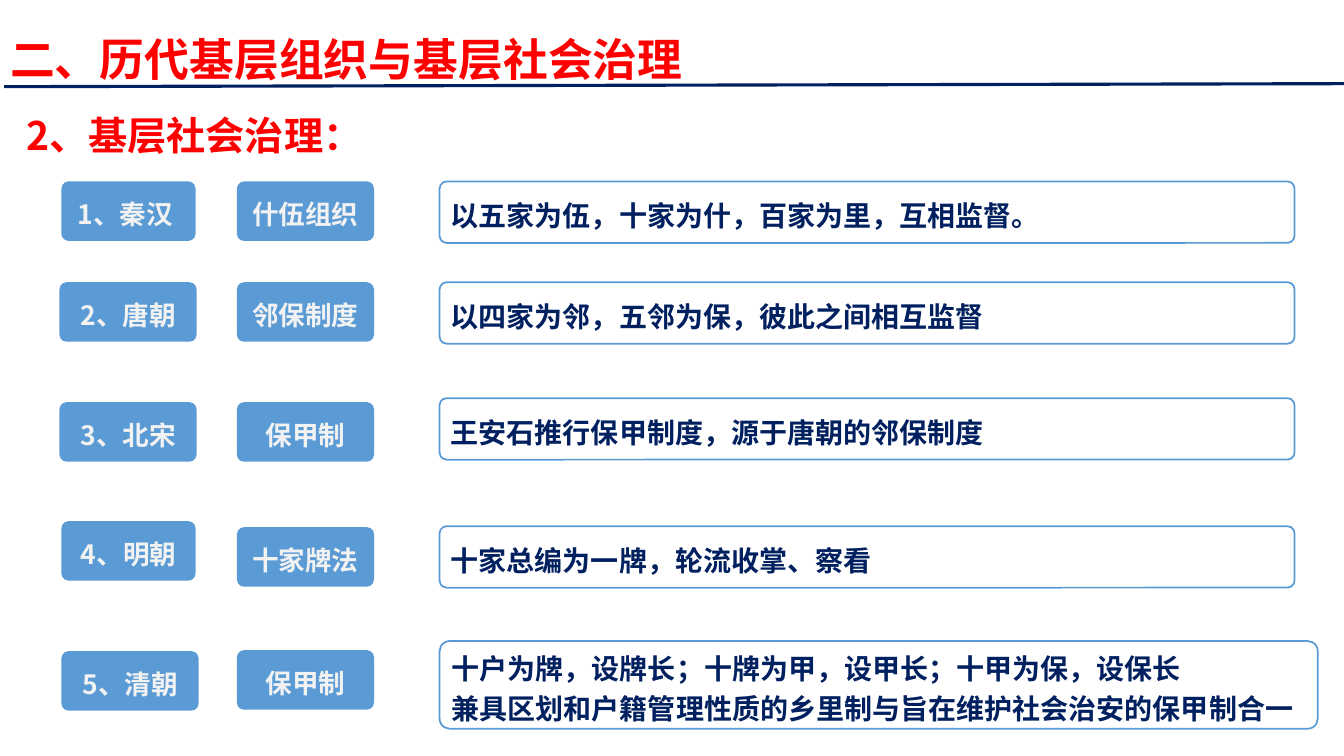
from dataclasses import dataclass

from lxml import etree
from pptx import Presentation, util as u
from pptx.dml.color import RGBColor
from pptx.enum import shapes, text
from pptx.oxml.ns import qn

PX = 9144  # EMU per px, 100 px to the inch
COLORS = {"red": "FF0000", "navy": "002060", "blue": "5B9BD5", "pale": "F2F2F2"}
SANS_SC = "Noto Sans CJK SC"
SANS_JP = "Noto Sans CJK JP"
SYSTEM_LEFT, DETAIL_LEFT = 235, 436
TAG_WIDTH, TAG_HEIGHT = 136, 59


@dataclass(frozen=True)
class Box:
    left: int
    top: int
    width: int
    height: int

    def emu(self) -> list[int]:
        return [v * PX for v in (self.left, self.top, self.width, self.height)]


@dataclass(frozen=True)
class Dynasty:
    name: str
    name_box: Box
    system: str
    system_top: int
    detail: str
    detail_top: int
    detail_width: int = 848
    detail_height: int = 61


DYNASTIES = [
    Dynasty("1、秦汉 ", Box(61, 180, 133, TAG_HEIGHT), "什伍组织", 180,
            "以五家为伍，十家为什，百家为里，互相监督。", 180),
    Dynasty("2、唐朝", Box(59, 280, TAG_WIDTH, TAG_HEIGHT), "邻保制度", 280,
            "以四家为邻，五邻为保，彼此之间相互监督", 280),
    Dynasty("3、北宋", Box(59, 399, TAG_WIDTH, TAG_HEIGHT), "保甲制", 399,
            "王安石推行保甲制度，源于唐朝的邻保制度", 395),
    Dynasty("4、明朝", Box(61, 517, 133, TAG_HEIGHT), "十家牌法", 523,
            "十家总编为一牌，轮流收掌、察看", 522),
    Dynasty("5、清朝", Box(61, 646, TAG_WIDTH, TAG_HEIGHT), "保甲制", 645,
            "十户为牌，设牌长；十牌为甲，设甲长；十甲为保，设保长\n"
            "兼具区划和户籍管理性质的乡里制与旨在维护社会治安的保甲制合一",
            636, 871, 87),
]


def rgb(name: str) -> RGBColor:
    return RGBColor.from_string(COLORS[name])


def write(shape, words: str, *, size: int, color: str, font: str = SANS_SC,
          align=text.PP_ALIGN.LEFT, spacing: float = 1.2,
          anchor=text.MSO_ANCHOR.MIDDLE, side: int = 9,
          fit=text.MSO_AUTO_SIZE.NONE) -> None:
    frame = shape.text_frame
    frame.text = words
    frame.word_wrap = True
    frame.auto_size = fit
    frame.vertical_anchor = anchor
    frame.margin_left = frame.margin_right = side * PX
    frame.margin_top = frame.margin_bottom = 5 * PX
    for paragraph in frame.paragraphs:
        paragraph.alignment = align
        paragraph.line_spacing = spacing
        paragraph.space_before = u.Pt(0)
        for run in paragraph.runs:
            run.font.size = u.Pt(size)
            run.font.bold = True
            run.font.color.rgb = rgb(color)
            run.font.name = font
            east_asian = etree.SubElement(run.font._element, qn("a:ea"))
            east_asian.set("typeface", font)


def rounded(slide, box: Box, corner: float):
    shape = slide.shapes.add_shape(shapes.MSO_SHAPE.ROUNDED_RECTANGLE, *box.emu())
    shape.adjustments[0] = corner
    shape.shadow.inherit = False
    return shape


def add_tag(slide, box: Box, words: str) -> None:
    tag = rounded(slide, box, 0.12)
    tag.fill.solid()
    tag.fill.fore_color.rgb = rgb("blue")
    tag.line.fill.background()
    write(tag, words, size=19, color="pale", align=text.PP_ALIGN.CENTER)


def add_detail(slide, box: Box, words: str) -> None:
    detail = rounded(slide, box, 0.115)
    detail.fill.background()
    detail.line.color.rgb = rgb("blue")
    detail.line.width = u.Pt(1.25)
    write(detail, words, size=20, color="navy")


def add_rule(slide) -> None:
    rule = slide.shapes.add_connector(
        shapes.MSO_CONNECTOR.STRAIGHT, 4 * PX, 86 * PX, 1333 * PX, 83 * PX)
    rule.line.color.rgb = rgb("navy")
    rule.line.width = u.Pt(2.25)
    etree.SubElement(rule._element.spPr, qn("a:effectLst"))


def main() -> None:
    deck = Presentation()
    deck.slide_width, deck.slide_height = 1333 * PX, 750 * PX
    slide = deck.slides.add_slide(deck.slide_layouts[5])

    # Headings
    heading = slide.shapes.title
    heading.left, heading.top, heading.width, heading.height = Box(0, 0, 895, 91).emu()
    top_fit = dict(color="red", anchor=text.MSO_ANCHOR.TOP, side=10,
                   fit=text.MSO_AUTO_SIZE.SHAPE_TO_FIT_TEXT)
    write(heading, "二、历代基层组织与基层社会治理", size=32, font=SANS_JP,
          align=text.PP_ALIGN.JUSTIFY, spacing=1.5, **top_fit)
    add_rule(slide)
    subheading = slide.shapes.add_textbox(*Box(16, 106, 439, 57).emu())
    write(subheading, "2、基层社会治理：", size=28, spacing=1.0, **top_fit)

    # One row per dynasty: name, system, explanation
    for row in DYNASTIES:
        add_tag(slide, row.name_box, row.name)
        add_tag(slide, Box(SYSTEM_LEFT, row.system_top, TAG_WIDTH, TAG_HEIGHT), row.system)
        add_detail(slide, Box(DETAIL_LEFT, row.detail_top, row.detail_width,
                              row.detail_height), row.detail)

    deck.save("out.pptx")


if __name__ == "__main__":
    main()
